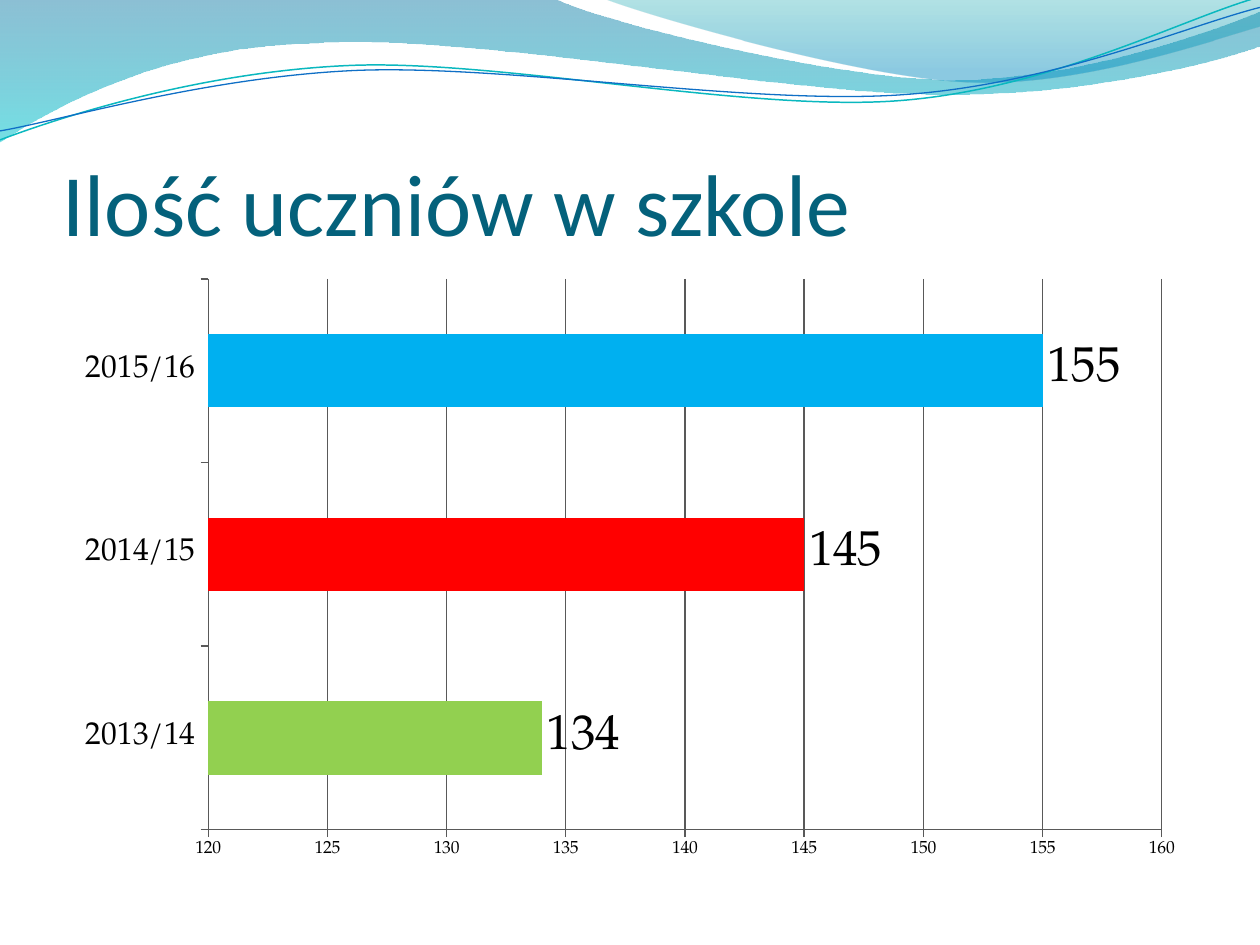
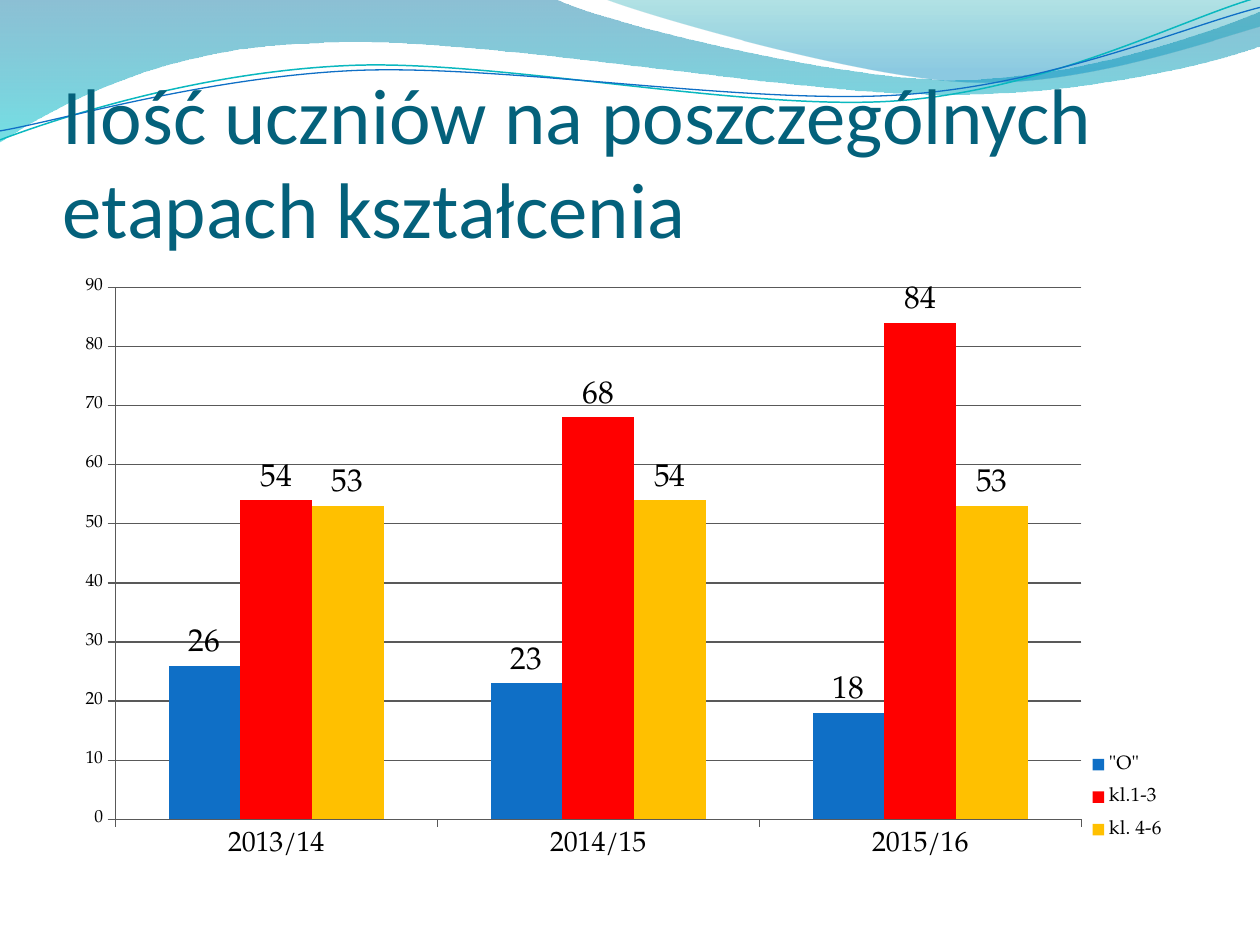
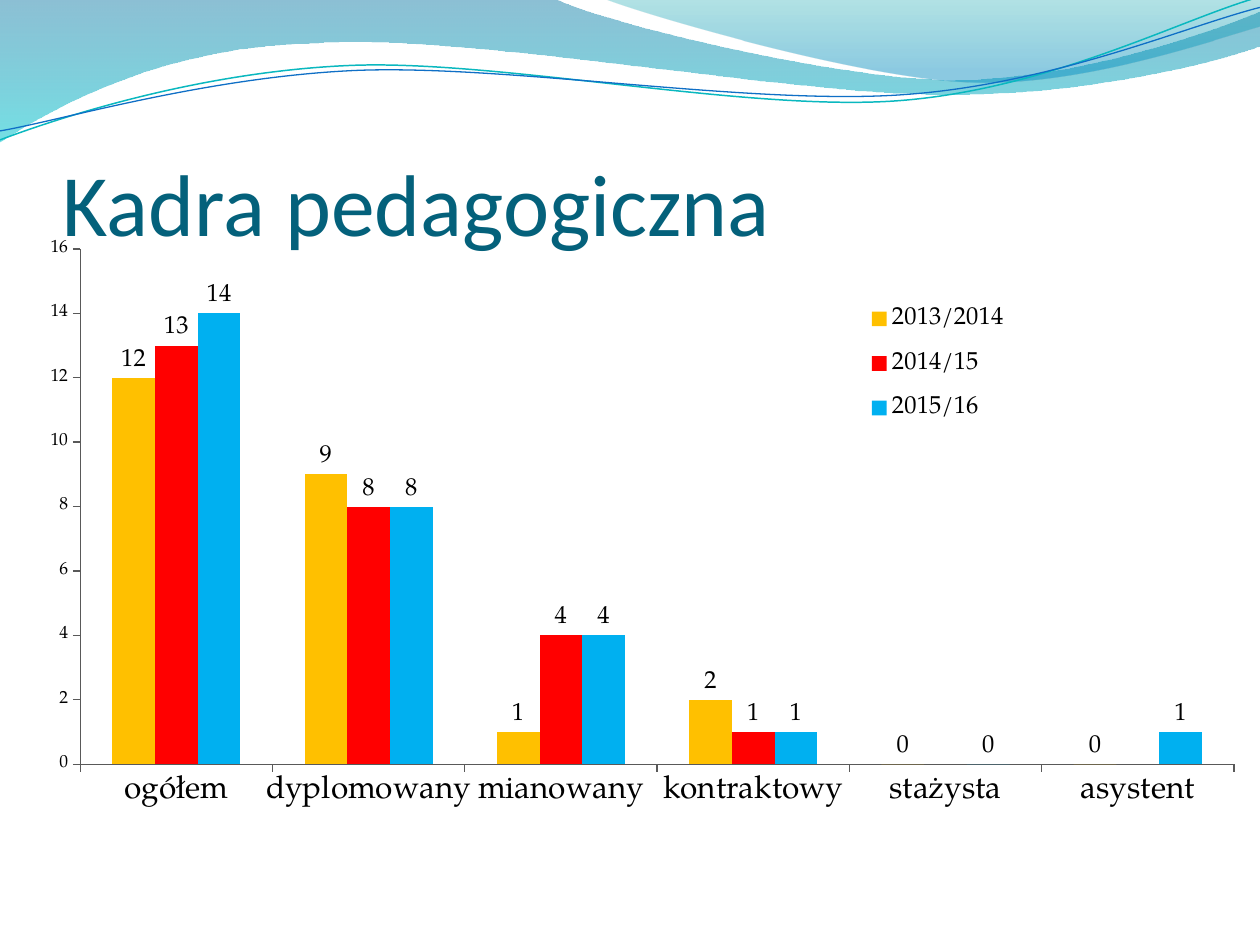
import math

from lxml import etree
from pptx import Presentation
from pptx.chart.data import CategoryChartData
from pptx.dml.color import RGBColor
from pptx.enum import chart as chart_enum, text as text_enum
from pptx.oxml import ns
from pptx.util import Cm, Pt

TITLE_COLOR = RGBColor(0x04, 0x61, 0x7B)
BLACK = RGBColor(0, 0, 0)
GRAY = RGBColor(0x59, 0x59, 0x59)
BLUE = RGBColor(0x0F, 0x6F, 0xC6)
SKY = RGBColor(0x00, 0xB0, 0xF0)
RED = RGBColor(0xFF, 0x00, 0x00)
GREEN = RGBColor(0x92, 0xD0, 0x50)
AMBER = RGBColor(0xFF, 0xC0, 0x00)
TEAL = RGBColor(0x0A, 0xB8, 0xBF)
WAVE_BLUE = RGBColor(0x00, 0x74, 0xA1)
WAVE_CYAN = RGBColor(0x00, 0xC6, 0xCF)
CREST_TEAL = RGBColor(0x00, 0xA1, 0xA9)
CREST_BLUE = RGBColor(0x00, 0x8B, 0xBF)

TITLE_FONT = "Calibri"
CHART_FONT = "TeX Gyre Pagella"
LINE_TILT = -2.7

BAND_BOX = (0, 0)
TITLE_BOX = (1.27, 1.95, 22.86, 3.18)
CHART_BOX = (1.27, 5.38, 22.86, 12.19)
WIDE_CHART_BOX = (0, 4.45, 24.89, 13.87)
YEARS = ["2013/14", "2014/15", "2015/16"]

WAVE = [
    [(0, 0)],
    [(11.18, -0.03)],
    [(12.09, 0.43), (16.87, 1.6), (19.25, 1.6)],
    [(21.67, 1.6), (24.33, 0.66), (25.4, 0.23)],
    [(25.43, 0.91)],
    [(24.97, 1.12), (22.1, 1.93), (18.95, 1.9)],
    [(15.8, 1.9), (9.7, 0.71), (6.53, 0.86)],
    [(3.28, 0.91), (1.17, 2.11), (-0.03, 2.87)],
    [(0, 0)],
]
CREST = [
    [(12.17, -0.03)],
    [(12.93, 0.28), (17.32, 1.57), (19.53, 1.65)],
    [(21.74, 1.75), (24.41, 0.81), (25.4, 0.53)],
    [(25.4, 0)],
    [(12.17, -0.03)],
]
TEAL_LINE = [
    [(0, 2.82)],
    [(1.22, 2.36), (4.01, 1.45), (7.04, 1.32)],
    [(10.03, 1.19), (15.06, 2.26), (18.11, 2.03)],
    [(21.16, 1.8), (23.83, 0.38), (25.35, -0.05)],
]
BLUE_LINE = [
    [(0, 2.64)],
    [(1.19, 2.44), (4.17, 1.55), (7.19, 1.42)],
    [(10.24, 1.3), (15.16, 2.13), (18.21, 1.91)],
    [(21.23, 1.7), (23.9, 0.53), (25.4, 0.15)],
]


def add_outline(slide, box, segments, close):
    """Draw a freeform of lines and cubic curves relative to the box."""
    left, top = box
    points = [(Cm(left + x), Cm(top + y)) for segment in segments for x, y in segment]
    builder = slide.shapes.build_freeform(*points[0])
    builder.add_line_segments(points[1:], close=close)
    shape = builder.convert_to_shape()
    shape.shadow.inherit = False
    steps = iter(shape.element.xpath(".//a:path/a:lnTo"))
    for segment in segments[1:]:
        first, *others = [next(steps) for _ in segment]
        if others:
            first.tag = ns.qn("a:cubicBezTo")
            for other in others:
                first.append(other[0])
                other.getparent().remove(other)
    return shape


def add_wave(slide, box, segments, stops):
    """Draw a closed wave with a translucent vertical gradient."""
    shape = add_outline(slide, box, segments, True)
    shape.line.fill.background()
    shape.fill.gradient()
    shape.fill.gradient_angle = 270
    for gradient_stop, (position, color, _) in zip(shape.fill.gradient_stops, stops):
        gradient_stop.position = position
        gradient_stop.color.rgb = color
    colors = shape.element.xpath(".//a:gs/a:srgbClr")
    for color_element, (_, _, opacity) in zip(colors, stops):
        alpha = etree.SubElement(color_element, ns.qn("a:alpha"))
        alpha.set("val", str(opacity * 1000))


def turn(segments, center, degrees):
    """Turn all points of the segments about a center."""
    center_x, center_y = center
    cosine, sine = math.cos(math.radians(degrees)), math.sin(math.radians(degrees))
    return [[(center_x + (x - center_x) * cosine - (y - center_y) * sine,
              center_y + (x - center_x) * sine + (y - center_y) * cosine)
             for x, y in segment] for segment in segments]


def add_wave_line(slide, box, segments, center, color, width):
    """Draw an open curved line in a slightly tilted frame."""
    shape = add_outline(slide, box, turn(segments, center, -LINE_TILT), False)
    shape.rotation = LINE_TILT
    shape.fill.background()
    shape.line.color.rgb = color
    shape.line.width = Pt(width)


def add_band(slide, box):
    """Draw the waves along the top of the slide."""
    add_wave(slide, box, WAVE, [(0, WAVE_BLUE, 45), (1, WAVE_CYAN, 55)])
    add_wave(slide, box, CREST, [(0, CREST_TEAL, 30), (0.8, CREST_BLUE, 45)])
    add_wave_line(slide, box, TEAL_LINE, (12.67, 1.46), TEAL, 0.85)
    add_wave_line(slide, box, BLUE_LINE, (12.69, 1.5), BLUE, 0.75)


def style_font(font, name, size, color):
    """Set the face, size and colour of a font."""
    font.name = name
    font.size = Pt(size)
    font.color.rgb = color


def add_title(slide, box, title, size):
    """Place the slide title at the bottom of its box."""
    frame = slide.shapes.add_textbox(*map(Cm, box)).text_frame
    frame.word_wrap = True
    frame.vertical_anchor = text_enum.MSO_ANCHOR.BOTTOM
    frame.margin_left = frame.margin_right = frame.margin_bottom = 0
    frame.margin_top = Cm(0.13)
    run = frame.paragraphs[0].add_run()
    run.text = title
    style_font(run.font, TITLE_FONT, size, TITLE_COLOR)


def set_layout(parent, index, percents, inner=False):
    """Fix a chart part at x, y, width and height in percent of the chart."""
    for old_layout in parent.findall(ns.qn("c:layout")):
        parent.remove(old_layout)
    layout = etree.Element(ns.qn("c:layout"))
    manual = etree.SubElement(layout, ns.qn("c:manualLayout"))
    settings = [("layoutTarget", "inner")] if inner else []
    settings += [("xMode", "edge"), ("yMode", "edge")]
    settings += [(key, str(percent / 100)) for key, percent in zip("xywh", percents)]
    for key, value in settings:
        etree.SubElement(manual, ns.qn("c:" + key)).set("val", value)
    parent.insert(index, layout)


def style_axes(chart, scale, category_size, gridlines):
    """Set the scale, lines and labels of both axes."""
    value_axis = chart.value_axis
    value_axis.minimum_scale, value_axis.maximum_scale, value_axis.major_unit = scale
    value_axis.has_major_gridlines = gridlines
    lines = [value_axis.format.line, chart.category_axis.format.line]
    if gridlines:
        lines.append(value_axis.major_gridlines.format.line)
    for line in lines:
        line.color.rgb = GRAY
        line.width = Pt(0.75)
    for axis, size in ((value_axis, 10), (chart.category_axis, category_size)):
        axis.major_tick_mark = chart_enum.XL_TICK_MARK.OUTSIDE
        style_font(axis.tick_labels.font, CHART_FONT, size, BLACK)


def add_legend(chart, size, percents):
    """Show the legend at a fixed place."""
    chart.has_legend = True
    chart.legend.position = chart_enum.XL_LEGEND_POSITION.RIGHT
    chart.legend.include_in_layout = False
    style_font(chart.legend.font, CHART_FONT, size, BLACK)
    set_layout(chart.element.xpath(".//c:legend")[0], 1, percents)


def add_bars(slide, box, kind, categories, series, scale, plot_area,
             category_size, label_size, gridlines=True):
    """Add a clustered chart from (name, values, colour) series."""
    data = CategoryChartData()
    data.categories = categories
    for name, values, _ in series:
        data.add_series(name, values)
    chart = slide.shapes.add_chart(kind, *map(Cm, box), data).chart
    chart.has_title = False
    chart.has_legend = False
    style_font(chart.font, CHART_FONT, 10, BLACK)
    style_axes(chart, scale, category_size, gridlines)
    plot = chart.plots[0]
    plot.gap_width = 150
    plot.overlap = 0
    plot.vary_by_categories = False
    plot.has_data_labels = True
    plot.data_labels.show_value = True
    plot.data_labels.position = chart_enum.XL_LABEL_POSITION.OUTSIDE_END
    style_font(plot.data_labels.font, CHART_FONT, label_size, BLACK)
    for bars, (_, _, color) in zip(plot.series, series):
        bars.invert_if_negative = False
        bars.format.fill.solid()
        bars.format.fill.fore_color.rgb = color
    set_layout(chart.element.xpath(".//c:plotArea")[0], 0, plot_area, inner=True)
    return chart


def add_slide(presentation, title, title_size):
    """Add a slide with the wave band and a title."""
    slide = presentation.slides.add_slide(presentation.slide_layouts[6])
    add_band(slide, BAND_BOX)
    add_title(slide, TITLE_BOX, title, title_size)
    return slide


def add_pupils_slide(presentation):
    """Show the number of pupils per school year."""
    slide = add_slide(presentation, "Ilość uczniów w szkole", 50)
    chart = add_bars(
        slide, CHART_BOX, chart_enum.XL_CHART_TYPE.BAR_CLUSTERED, YEARS,
        [("Series 1", [134, 145, 155], BLUE)],
        (120, 160, 5), (12.8, 2, 84.1, 91.1), 18, 28)
    for index, color in enumerate((GREEN, RED, SKY)):
        fill = chart.plots[0].series[0].points[index].format.fill
        fill.solid()
        fill.fore_color.rgb = color


def add_stages_slide(presentation):
    """Show the number of pupils per stage of education."""
    slide = add_slide(presentation, "Ilość uczniów na poszczególnych etapach kształcenia", 45)
    chart = add_bars(
        slide, CHART_BOX, chart_enum.XL_CHART_TYPE.COLUMN_CLUSTERED, YEARS,
        [('"O"', [26, 23, 18], BLUE),
         ("kl.1-3", [54, 68, 84], RED),
         ("kl. 4-6", [53, 54, 53], AMBER)],
        (0, 90, 10), (4.6, 3.4, 85.2, 88), 16, 18)
    add_legend(chart, 11, (88.85, 78.6, 10, 18.2))


def add_staff_slide(presentation):
    """Show the teaching staff per professional grade."""
    slide = add_slide(presentation, "Kadra pedagogiczna", 50)
    chart = add_bars(
        slide, WIDE_CHART_BOX, chart_enum.XL_CHART_TYPE.COLUMN_CLUSTERED,
        ["ogółem", "dyplomowany", "mianowany", "kontraktowy", "stażysta", "asystent"],
        [("2013/2014", [12, 9, 1, 2, 0, 0], AMBER),
         ("2014/15", [13, 8, 4, 1, None, None], RED),
         ("2015/16", [14, 8, 4, 1, 0, 1], SKY)],
        (0, 16, 2), (6.5, 4.1, 93.5, 74.9), 18, 14, gridlines=False)
    add_legend(chart, 14, (68, 9.6, 16, 22.3))


def main():
    """Build and save the presentation."""
    presentation = Presentation()
    presentation.slide_width = Cm(25.4)
    presentation.slide_height = Cm(19.05)
    add_pupils_slide(presentation)
    add_stages_slide(presentation)
    add_staff_slide(presentation)
    presentation.save("out.pptx")


if __name__ == "__main__":
    main()
